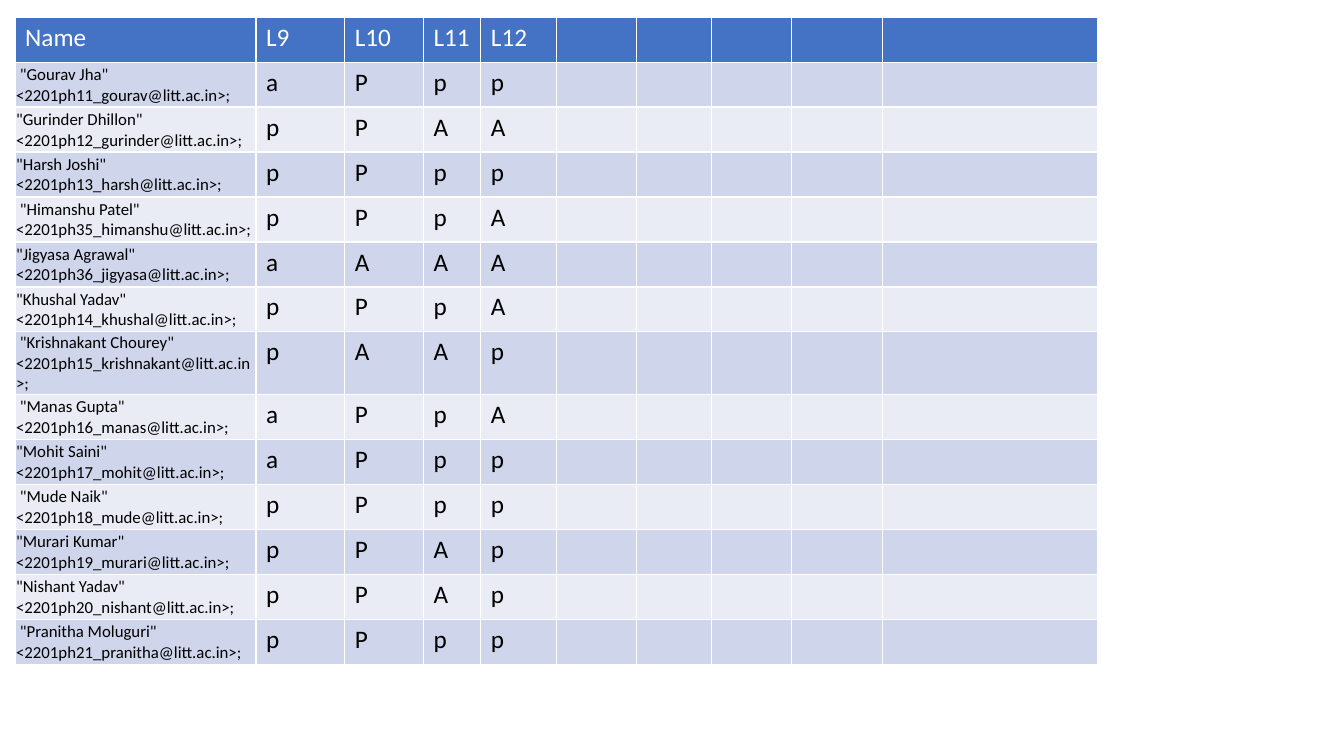
from pptx import Presentation
from pptx.dml.color import RGBColor
from pptx.enum.text import MSO_ANCHOR
from pptx.util import Inches, Pt

MIDDLE = MSO_ANCHOR.MIDDLE
FONT = "Calibri"
HEADER_FILL, BAND_FILLS = "4472C4", ("CFD5EA", "E9EBF5")

HEADERS = ["Name", "L9", "L10", "L11", "L12"]
COL_WIDTHS = [2.39, 0.88, 0.78, 0.57, 0.75, 0.79, 0.75, 0.79, 0.9, 2.14]
# Name, mailbox, one attendance mark per lecture
STUDENTS = [
    (' "Gourav Jha"', "2201ph11_gourav", "aPpp"),
    ('"Gurinder Dhillon"', "2201ph12_gurinder", "pPAA"),
    ('"Harsh Joshi"', "2201ph13_harsh", "pPpp"),
    (' "Himanshu Patel"', "2201ph35_himanshu", "pPpA"),
    ('"Jigyasa Agrawal"', "2201ph36_jigyasa", "aAAA"),
    ('"Khushal Yadav"', "2201ph14_khushal", "pPpA"),
    (' "Krishnakant Chourey"', "2201ph15_krishnakant", "pAAp"),
    (' "Manas Gupta"', "2201ph16_manas", "aPpA"),
    ('"Mohit Saini"', "2201ph17_mohit", "aPpp"),
    (' "Mude Naik"', "2201ph18_mude", "pPpp"),
    ('"Murari Kumar"', "2201ph19_murari", "pPAp"),
    ('"Nishant Yadav"', "2201ph20_nishant", "pPAp"),
    (' "Pranitha Moluguri"', "2201ph21_pranitha", "pPpp"),
]


def rgb(value):
    return RGBColor.from_string(value)


def fill_cell(cell, text, fill, color, size=18):
    cell.fill.solid()
    cell.fill.fore_color.rgb = rgb(fill)
    cell.text_frame.text = text
    for r in cell.text_frame.paragraphs[0].runs:
        r.font.name = FONT
        r.font.size = Pt(size)
        r.font.bold = False
        r.font.color.rgb = rgb(color)


prs = Presentation()
prs.slide_width, prs.slide_height = Inches(13.33), Inches(7.5)
s = prs.slides.add_slide(prs.slide_layouts[6])

# Attendance table; its default style supplies the white borders
table = s.shapes.add_table(len(STUDENTS) + 1, len(COL_WIDTHS), Inches(0.15),
                           Inches(0.17), Inches(10.75), Inches(6.25)).table
for column, width in zip(table.columns, COL_WIDTHS):
    column.width = Inches(width)

# Header row
for col in range(len(COL_WIDTHS)):
    text = HEADERS[col] if col < len(HEADERS) else ""
    fill_cell(table.cell(0, col), text, HEADER_FILL, "FFFFFF")

# Student rows
for row, (name, mailbox, marks) in enumerate(STUDENTS, start=1):
    fill = BAND_FILLS[(row - 1) % 2]
    cell = table.cell(row, 0)
    fill_cell(cell, f"{name} <{mailbox}@litt.ac.in>;", fill, "000000", 12)
    cell.vertical_anchor = MIDDLE
    cell.margin_left = cell.margin_top = cell.margin_right = Inches(0.01)
    cell.margin_bottom = 0
    for col in range(1, len(COL_WIDTHS)):
        text = marks[col - 1] if col <= len(marks) else ""
        fill_cell(table.cell(row, col), text, fill, "000000")

prs.save("out.pptx")
